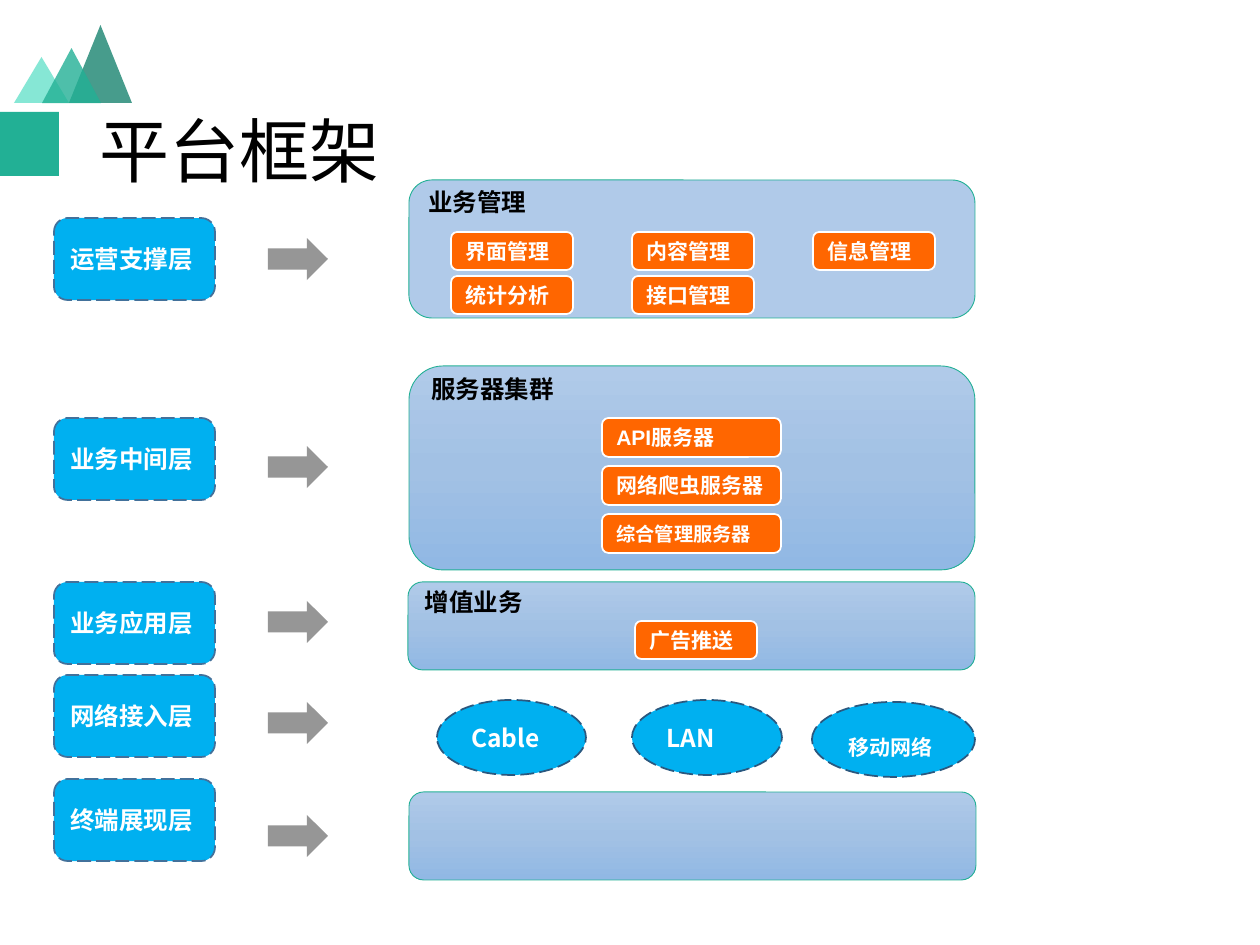
"""Build the platform framework slide: five layers with their components."""
import copy

import pptx
import pptx.dml.color
import pptx.enum.dml
import pptx.enum.shapes
import pptx.enum.text
import pptx.oxml
import pptx.oxml.ns
import pptx.util

RGBColor = pptx.dml.color.RGBColor
SHAPE = pptx.enum.shapes.MSO_SHAPE
ANCHOR = pptx.enum.text.MSO_ANCHOR
ALIGN = pptx.enum.text.PP_ALIGN
EMU_PER_PX = 914400 / 126

BLACK = RGBColor(0x00, 0x00, 0x00)
WHITE = RGBColor(0xFF, 0xFF, 0xFF)
GREEN = RGBColor(0x22, 0xB0, 0x95)
DARK_GREEN = RGBColor(0x19, 0x84, 0x70)
LIGHT_GREEN = RGBColor(0x68, 0xE2, 0xCB)
CYAN = RGBColor(0x00, 0xB0, 0xF0)
LAYER_EDGE = RGBColor(0x42, 0x71, 0x9B)
NETWORK_EDGE = RGBColor(0x2A, 0x58, 0x7F)
ORANGE = RGBColor(0xFF, 0x66, 0x00)
GREY = RGBColor(0x96, 0x96, 0x96)
PANEL_TOP = RGBColor(0xB0, 0xCA, 0xE9)
PANEL_MIDDLE = RGBColor(0xA2, 0xC1, 0xE4)
PANEL_BOTTOM = RGBColor(0x91, 0xB8, 0xE4)

deck = pptx.Presentation()
deck.slide_width = pptx.util.Inches(10)
deck.slide_height = pptx.util.Inches(7.5)
page = deck.slides.add_slide(deck.slide_layouts[6])


def add_block(kind, bounds, fill, edge=None, width=1, dashed=False):
    block = page.shapes.add_shape(kind, *(round(value * EMU_PER_PX) for value in bounds))
    block.shadow.inherit = False
    block.fill.solid()
    block.fill.fore_color.rgb = fill
    if edge is None:
        block.line.fill.background()
    else:
        block.line.color.rgb = edge
        block.line.width = pptx.util.Pt(width)
    if dashed:
        block.line.dash_style = pptx.enum.dml.MSO_LINE.LONG_DASH
    return block


def write(box, text, size, color=WHITE, anchor=ANCHOR.MIDDLE, align=ALIGN.LEFT,
          spacing=1.0, font="Arial", bold=True):
    frame = box.text_frame
    frame.word_wrap = True
    frame.vertical_anchor = anchor
    para = frame.paragraphs[0]
    para.text = text
    para.alignment = align
    para.line_spacing = spacing
    para.font.name = font
    para.font.size = pptx.util.Pt(size)
    para.font.bold = bold
    para.font.color.rgb = color


for bounds, color in [
    ((69, 25, 63, 78), DARK_GREEN),
    ((14, 57, 55, 46), LIGHT_GREEN),
    ((42, 48, 59, 55), GREEN),
]:
    peak = add_block(SHAPE.ISOSCELES_TRIANGLE, bounds, color)
    swatch = peak._element.spPr.find(".//" + pptx.oxml.ns.qn("a:srgbClr"))
    swatch.append(pptx.oxml.parse_xml(
        f'<a:alpha {pptx.oxml.ns.nsdecls("a")} val="80000"/>'))

add_block(SHAPE.RECTANGLE, (0, 112, 59, 64), GREEN)
title = page.shapes.add_textbox(
    *(round(value * EMU_PER_PX) for value in (87, 50, 1086, 183)))
write(title, "平台框架", 40, BLACK, spacing=1.2, bold=False)

for name, layer_top, arrow_top in [
    ("运营支撑层", 218, 238),
    ("业务中间层", 418, 446),
    ("业务应用层", 582, 601),
    ("网络接入层", 675, 702),
    ("终端展现层", 779, 815),
]:
    layer = add_block(SHAPE.ROUNDED_RECTANGLE, (54, layer_top, 161, 82), CYAN,
                      LAYER_EDGE, dashed=True)
    write(layer, name, 14)
    add_block(SHAPE.RIGHT_ARROW, (268, arrow_top, 60, 42), GREY)

for heading, bounds, spacing, shaded in [
    ("业务管理", (409, 180, 566, 138), 0.8, False),
    ("服务器集群", (409, 366, 566, 204), 0.7, True),
    ("增值业务", (408, 582, 567, 88), 0.8, True),
    ("", (409, 792, 567, 88), 1.0, True),
]:
    panel = add_block(SHAPE.ROUNDED_RECTANGLE, bounds, PANEL_TOP, GREEN, 0.5)
    if shaded:
        panel.fill.gradient()
        panel.fill.gradient_angle = 270
        stop_list = panel._element.spPr.find(".//" + pptx.oxml.ns.qn("a:gsLst"))
        stop_list.append(copy.deepcopy(stop_list[-1]))
        shades = [(0, PANEL_TOP), (0.5, PANEL_MIDDLE), (1, PANEL_BOTTOM)]
        for stop, (position, color) in zip(panel.fill.gradient_stops, shades):
            stop.position = position
            stop.color.rgb = color
    if heading:
        write(panel, heading, 14, BLACK, ANCHOR.TOP, spacing=spacing)

modules = ["界面管理", "内容管理", "信息管理", "统计分析", "接口管理"]
chips = [(name, 451 + 181 * (index % 3), 232 + 44 * (index // 3))
         for index, name in enumerate(modules)]
for name, left, top in chips + [("广告推送", 635, 621)]:
    chip = add_block(SHAPE.ROUNDED_RECTANGLE, (left, top, 122, 38), ORANGE, WHITE)
    write(chip, name, 12, align=ALIGN.JUSTIFY)

servers = [("API服务器", 12), ("网络爬虫服务器", 12), ("综合管理服务器", 11)]
for index, (name, size) in enumerate(servers):
    server = add_block(SHAPE.ROUNDED_RECTANGLE, (602, 418 + 48 * index, 179, 39),
                       ORANGE, WHITE)
    write(server, name, size)

for name, bounds, size, anchor, font in [
    ("Cable", (437, 700, 149, 75), 14, ANCHOR.MIDDLE, "Noto Sans CJK SC"),
    ("LAN", (632, 700, 150, 75), 14, ANCHOR.MIDDLE, "Noto Sans CJK SC"),
    ("移动网络", (812, 702, 163, 75), 12, ANCHOR.BOTTOM, "Arial"),
]:
    network = add_block(SHAPE.OVAL, bounds, CYAN, NETWORK_EDGE, dashed=True)
    write(network, name, size, anchor=anchor, font=font)

deck.save("out.pptx")
